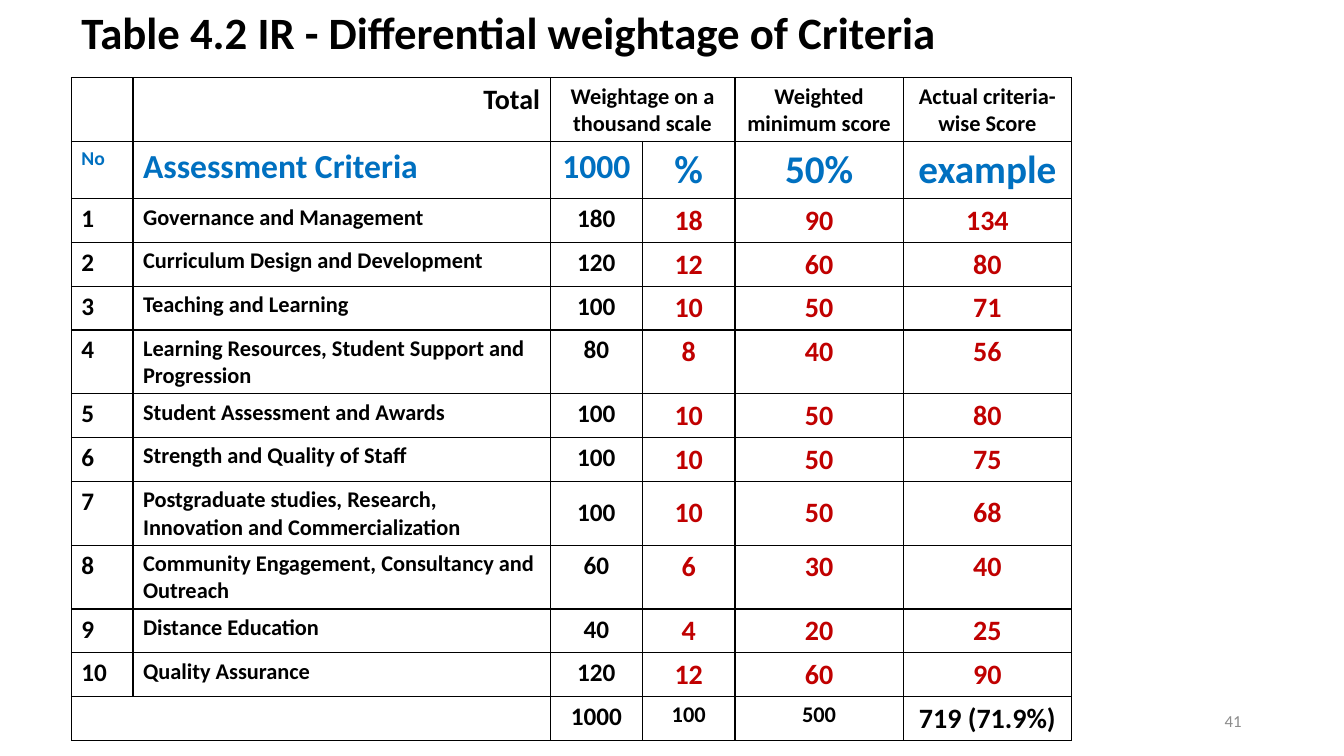
from dataclasses import dataclass

from lxml import etree
from pptx import Presentation
from pptx.dml.color import RGBColor
from pptx.enum import text as t
from pptx.oxml import ns
from pptx.util import Pt

LEFT, CENTER, RIGHT = t.PP_ALIGN.LEFT, t.PP_ALIGN.CENTER, t.PP_ALIGN.RIGHT
TOP, MIDDLE = t.MSO_ANCHOR.TOP, t.MSO_ANCHOR.MIDDLE


@dataclass(frozen=True)
class Theme:
    font: str = "Calibri"
    black: str = "000000"
    white: str = "FFFFFF"
    blue: str = "0070C0"
    red: str = "C00000"
    grey: str = "8C8C8C"
    title: int = 32
    banner: int = 28
    heading: int = 24
    score: int = 20
    number: int = 18
    body: int = 16
    label: int = 14
    footer: int = 12


THEME = Theme()
COLUMN_WIDTHS = [44, 298, 66, 66, 120.25, 120.25]
ROW_HEIGHT = 29.5
# criterion, weightage out of 1000, example score
CRITERIA = [
    ("Governance and Management", 180, 134),
    ("Curriculum Design and Development", 120, 80),
    ("Teaching and Learning", 100, 71),
    ("Learning Resources, Student Support and Progression", 80, 56),
    ("Student Assessment and Awards", 100, 80),
    ("Strength and Quality of Staff", 100, 75),
    ("Postgraduate studies, Research, Innovation and Commercialization", 100, 68),
    ("Community Engagement, Consultancy and Outreach", 60, 40),
    ("Distance Education", 40, 25),
    ("Quality Assurance", 120, 90),
]
MIDDLE_ANCHORED_CRITERION = 7


def write(tf, content, size, color=THEME.black, bold=True, align=LEFT, anchor=TOP):
    tf.word_wrap = True
    tf.vertical_anchor = anchor
    p = tf.paragraphs[0]
    p.alignment = align
    r = p.add_run()
    r.text = str(content)
    r.font.name = THEME.font
    r.font.size = Pt(size)
    r.font.bold = bold
    r.font.color.rgb = RGBColor.from_string(color)


def write_cell(cell, content, size, anchor=TOP, **fmt):
    write(cell.text_frame, content, size, **fmt)
    cell.vertical_anchor = anchor


def style_cell(cell):
    """Give a cell thin black borders and a white fill."""
    tc_pr = cell._tc.get_or_add_tcPr()
    for side in ("lnL", "lnR", "lnT", "lnB"):
        line = etree.SubElement(tc_pr, ns.qn(f"a:{side}"), w=str(Pt(1)))
        fill = etree.SubElement(line, ns.qn("a:solidFill"))
        etree.SubElement(fill, ns.qn("a:srgbClr"), val=THEME.black)
    cell.fill.solid()
    cell.fill.fore_color.rgb = RGBColor.from_string(THEME.white)


def add_grid(s, row_count):
    frame = s.shapes.add_table(row_count, len(COLUMN_WIDTHS), Pt(51), Pt(55.5),
                               Pt(sum(COLUMN_WIDTHS)), Pt(ROW_HEIGHT * row_count))
    table = frame.table
    table.first_row = table.horz_banding = False
    for column, width in zip(table.columns, COLUMN_WIDTHS):
        column.width = Pt(width)
    for cell in table.iter_cells():
        style_cell(cell)
    return table


def fill_headings(table):
    table.cell(0, 2).merge(table.cell(0, 3))
    write_cell(table.cell(0, 1), "Total", THEME.score, align=RIGHT)
    for column, heading in ((2, "Weightage on a thousand scale"),
                            (4, "Weighted minimum score"),
                            (5, "Actual criteria-wise Score")):
        write_cell(table.cell(0, column), heading, THEME.body, align=CENTER)
    labels = [("No", THEME.label, LEFT), ("Assessment Criteria", THEME.heading, LEFT),
              ("1000", THEME.heading, CENTER), ("%", THEME.banner, CENTER),
              ("50%", THEME.banner, CENTER), ("example", THEME.banner, CENTER)]
    for column, (label, size, align) in enumerate(labels):
        write_cell(table.cell(1, column), label, size, color=THEME.blue, align=align)


def fill_criterion(table, number, name, weight, score):
    row = number + 1
    anchor = MIDDLE if number == MIDDLE_ANCHORED_CRITERION else TOP
    write_cell(table.cell(row, 0), number, THEME.number)
    write_cell(table.cell(row, 1), name, THEME.body)
    write_cell(table.cell(row, 2), weight, THEME.number, align=CENTER, anchor=anchor)
    for column, value in enumerate((weight // 10, weight // 2, score), start=3):
        write_cell(table.cell(row, column), value, THEME.score, color=THEME.red,
                   align=CENTER, anchor=anchor)


def fill_totals(table, row):
    weight = sum(c[1] for c in CRITERIA)
    score = sum(c[2] for c in CRITERIA)
    table.cell(row, 0).merge(table.cell(row, 1))
    totals = [(weight, THEME.number), (weight // 10, THEME.body),
              (weight // 2, THEME.body), (f"{score} ({score / weight:.1%})", THEME.score)]
    for column, (total, size) in enumerate(totals, start=2):
        write_cell(table.cell(row, column), total, size, align=CENTER)


def add_title(s, content):
    sp = s.shapes.title
    sp.left, sp.top, sp.width, sp.height = Pt(51), Pt(0), Pt(666), Pt(46)
    write(sp.text_frame, content, THEME.title)
    sp.text_frame.auto_size = t.MSO_AUTO_SIZE.SHAPE_TO_FIT_TEXT


def add_page_number(s, number):
    sp = s.shapes.add_textbox(Pt(678), Pt(500.5), Pt(216), Pt(28.75))
    write(sp.text_frame, number, THEME.footer, color=THEME.grey, bold=False,
          align=RIGHT, anchor=MIDDLE)


def main():
    prs = Presentation()
    prs.slide_width, prs.slide_height = Pt(960), Pt(540)
    s = prs.slides.add_slide(prs.slide_layouts[5])
    add_title(s, "Table 4.2 IR - Differential weightage of Criteria")
    add_page_number(s, 41)
    table = add_grid(s, len(CRITERIA) + 3)
    fill_headings(table)
    for number, criterion in enumerate(CRITERIA, start=1):
        fill_criterion(table, number, *criterion)
    fill_totals(table, len(CRITERIA) + 2)
    prs.save("out.pptx")


if __name__ == "__main__":
    main()
